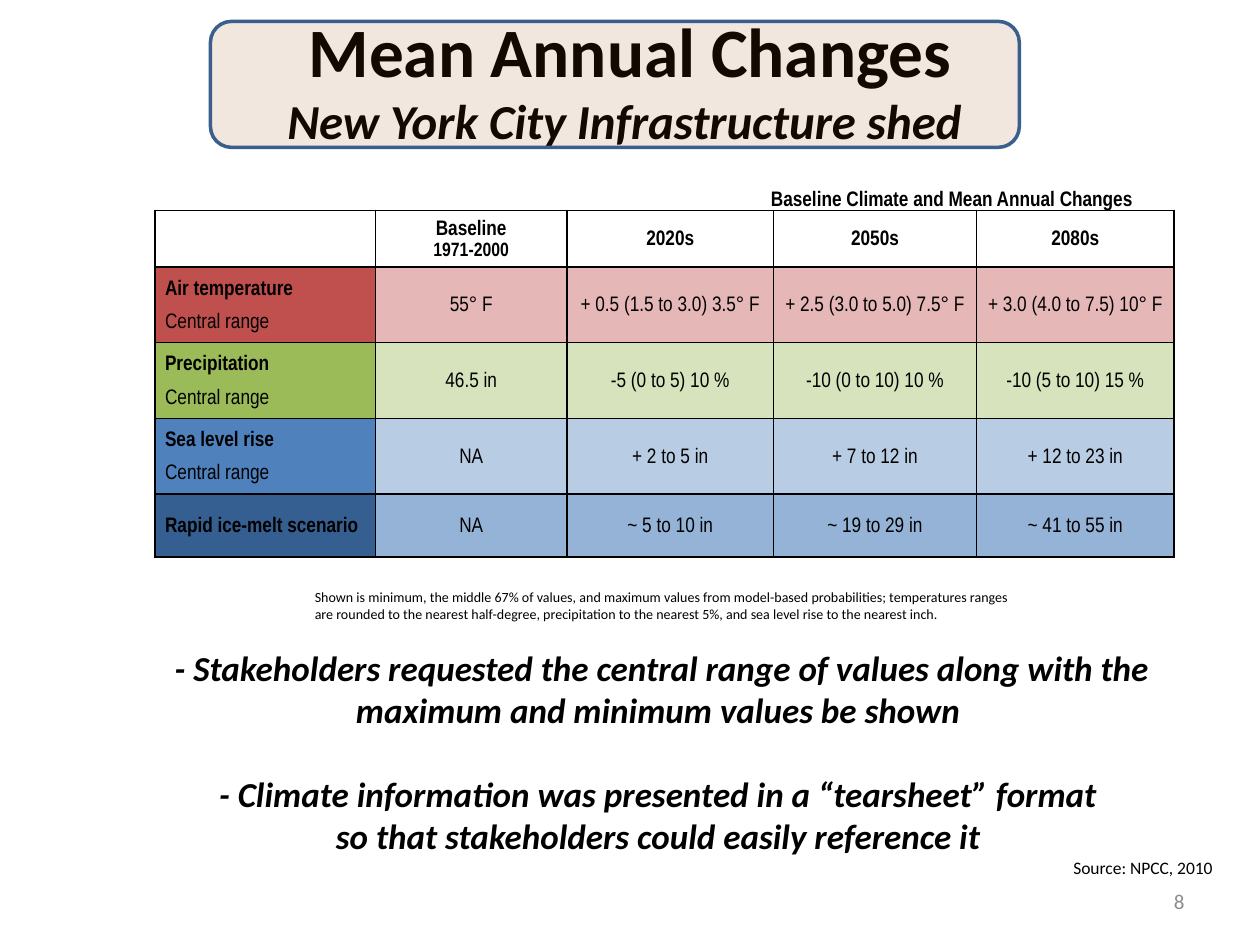
"""Build the slide on mean annual climate changes in New York City."""
from lxml import etree
from pptx import Presentation
from pptx import util as u
from pptx.dml.color import RGBColor
from pptx.enum import shapes, text
from pptx.oxml import ns

HUES = {"ink": "000000", "gray": "8C8C8C", "tan": "984807", "edge": "3A5F8C"}
ROWS = [
    ("Air temperature", True, "C0504D", "E5B8B7",
     ["55° F", "+ 0.5 (1.5 to 3.0) 3.5° F", "+ 2.5 (3.0 to 5.0) 7.5° F",
      "+ 3.0 (4.0 to 7.5) 10° F"]),
    ("Precipitation", True, "9BBB59", "D6E3BC",
     ["46.5 in", "-5 (0 to 5) 10 %", "-10 (0 to 10) 10 %", "-10 (5 to 10) 15 %"]),
    ("Sea level rise", True, "4F81BD", "B8CCE4",
     ["NA", "+ 2 to 5 in", "+ 7 to 12 in", "+ 12 to 23 in"]),
    ("Rapid ice-melt scenario", False, "365F91", "95B3D7",
     ["NA", "~ 5 to 10 in", "~ 19 to 29 in", "~ 41 to 55 in"]),
]
HEADS = [["Baseline", "1971-2000"], ["2020s"], ["2050s"], ["2080s"]]
WIDTHS = [1.75, 1.52, 1.64, 1.61, 1.57]
HEIGHTS = [0.45, 0.6, 0.6, 0.6, 0.5]
LEFT, MID, RIGHT = (text.PP_ALIGN.LEFT, text.PP_ALIGN.CENTER, text.PP_ALIGN.RIGHT)
MIDDLE, TOP = text.MSO_ANCHOR.MIDDLE, text.MSO_ANCHOR.TOP


def apply(item, vals):
    """Set each named value on an object."""
    for name, val in vals.items():
        setattr(item, name, val)


def style(font, size, face="Calibri", hue="ink", **marks):
    """Give a font its size, face, colour and marks."""
    apply(font, {"size": u.Pt(size), "name": face, **marks})
    font.color.rgb = RGBColor.from_string(HUES[hue])


def write(frame, lines, size, form=None, **look):
    """Write lines as paragraphs that share one look."""
    for num, line in enumerate(lines):
        para = frame.add_paragraph() if num else frame.paragraphs[0]
        run = para.add_run()
        run.text = line
        apply(para, form or {})
        style(run.font, size, **look)
    frame.paragraphs[0].space_before = u.Pt(0)


def box(slide, area, anchor=MIDDLE):
    """Add a wrapping text box and return its frame."""
    frame = slide.shapes.add_textbox(*map(u.Inches, area)).text_frame
    apply(frame, {"word_wrap": True, "vertical_anchor": anchor})
    return frame


def panel(slide):
    """Add the tinted round panel over the title."""
    area = map(u.Inches, (1.67, 0.17, 6.42, 1))
    shape = slide.shapes.add_shape(shapes.MSO_SHAPE.ROUNDED_RECTANGLE, *area)
    shape.shadow.inherit = False
    shape.fill.solid()
    shape.fill.fore_color.rgb = RGBColor.from_string(HUES["tan"])
    tint = shape.fill._xPr.find(".//" + ns.qn("a:srgbClr"))
    etree.SubElement(tint, ns.qn("a:alpha"), val="13000")
    shape.line.color.rgb = RGBColor.from_string(HUES["edge"])
    shape.line.width = u.Pt(2)


def title(slide):
    """Add the two-line title."""
    para = box(slide, (0.5, 0, 9, 1.25)).paragraphs[0]
    para.alignment = MID
    main_run = para.add_run()
    main_run.text = "Mean Annual Changes"
    style(main_run.font, 39.6, bold=True)
    para.add_line_break()
    sub = para.add_run()
    sub.text = "New York City Infrastructure shed "
    style(sub.font, 27.9, bold=True, italic=True)


def trim(cell, fill=None):
    """Set the margins, borders and fill of a cell."""
    apply(cell, {"margin_left": u.Inches(0.08), "margin_right": u.Inches(0.08),
                 "margin_top": 0, "margin_bottom": 0, "vertical_anchor": MIDDLE})
    props = cell._tc.get_or_add_tcPr()
    for side in ("lnL", "lnR", "lnT", "lnB"):
        line = etree.SubElement(props, ns.qn("a:" + side), w=str(u.Pt(1)))
        solid = etree.SubElement(line, ns.qn("a:solidFill"))
        etree.SubElement(solid, ns.qn("a:srgbClr"), val=HUES["ink"])
    if fill:
        cell.fill.solid()
        cell.fill.fore_color.rgb = RGBColor.from_string(fill)
    else:
        cell.fill.background()


def grid(slide):
    """Add the table of baseline values and changes."""
    area = map(u.Inches, (1.23, 1.67, sum(WIDTHS), sum(HEIGHTS)))
    table = slide.shapes.add_table(len(HEIGHTS), len(WIDTHS), *area).table
    apply(table, {"first_row": False, "horz_banding": False})
    for col, width in zip(table.columns, WIDTHS):
        col.width = u.Inches(width)
    for row, height in zip(table.rows, HEIGHTS):
        row.height = u.Inches(height)
    face = "Arial Narrow"
    base = {"line_spacing": 1.15}
    gaps = {**base, "space_before": u.Pt(3), "space_after": u.Pt(3)}
    trim(table.cell(0, 0))
    for x, lines in enumerate(HEADS, 1):
        cell = table.cell(0, x)
        trim(cell)
        write(cell.text_frame, lines, 12, {**base, "alignment": MID},
              face=face, bold=True)
    table.cell(0, 1).text_frame.paragraphs[1].runs[0].font.size = u.Pt(11)
    for y, (name, ranged, dark, pale, vals) in enumerate(ROWS, 1):
        cell = table.cell(y, 0)
        trim(cell, dark)
        lines = [name, "Central range"] if ranged else [name]
        write(cell.text_frame, lines, 12, {**gaps, "alignment": LEFT},
              face=face, bold=True)
        if ranged:
            cell.text_frame.paragraphs[1].runs[0].font.bold = False
        for x, val in enumerate(vals, 1):
            cell = table.cell(y, x)
            trim(cell, pale)
            write(cell.text_frame, [val], 12, {**gaps, "alignment": MID},
                  face=face, bold=False)


def notes(slide):
    """Add the caption, footnote, key points, source and page number."""
    write(box(slide, (7.17, 6.95, 2.33, 0.4)), ["8"], 12,
          {"alignment": RIGHT}, hue="gray")
    write(box(slide, (6.02, 1.42, 3.17, 0.3)),
          ["Baseline Climate and Mean Annual Changes"], 12,
          face="Arial Narrow", bold=True)
    write(box(slide, (8.42, 6.75, 1.5, 0.27), TOP), ["Source: NPCC, 2010"], 10)
    write(box(slide, (2.4, 4.55, 5.83, 0.51)),
          ["Shown is minimum, the middle 67% of values, and maximum values from "
           "model-based probabilities; temperatures ranges are rounded to the "
           "nearest half-degree, precipitation to the nearest 5%, and sea level "
           "rise to the nearest inch."], 8)
    points = box(slide, (1.17, 5.08, 8.17, 1.77), TOP)
    write(points,
          ["- Stakeholders requested the central range of values along with the "
           "maximum and minimum values be shown ",
           "- Climate information was presented in a “tearsheet” format ",
           "so that stakeholders could easily reference it "], 20,
          {"alignment": MID}, bold=True, italic=True)
    points.paragraphs[1].space_before = u.Pt(24)


def main():
    """Build and save the slide."""
    deck = Presentation()
    apply(deck, {"slide_width": u.Inches(10), "slide_height": u.Inches(7.5)})
    slide = deck.slides.add_slide(deck.slide_layouts[6])
    title(slide)
    grid(slide)
    notes(slide)
    panel(slide)
    deck.save("out.pptx")


if __name__ == "__main__":
    main()
